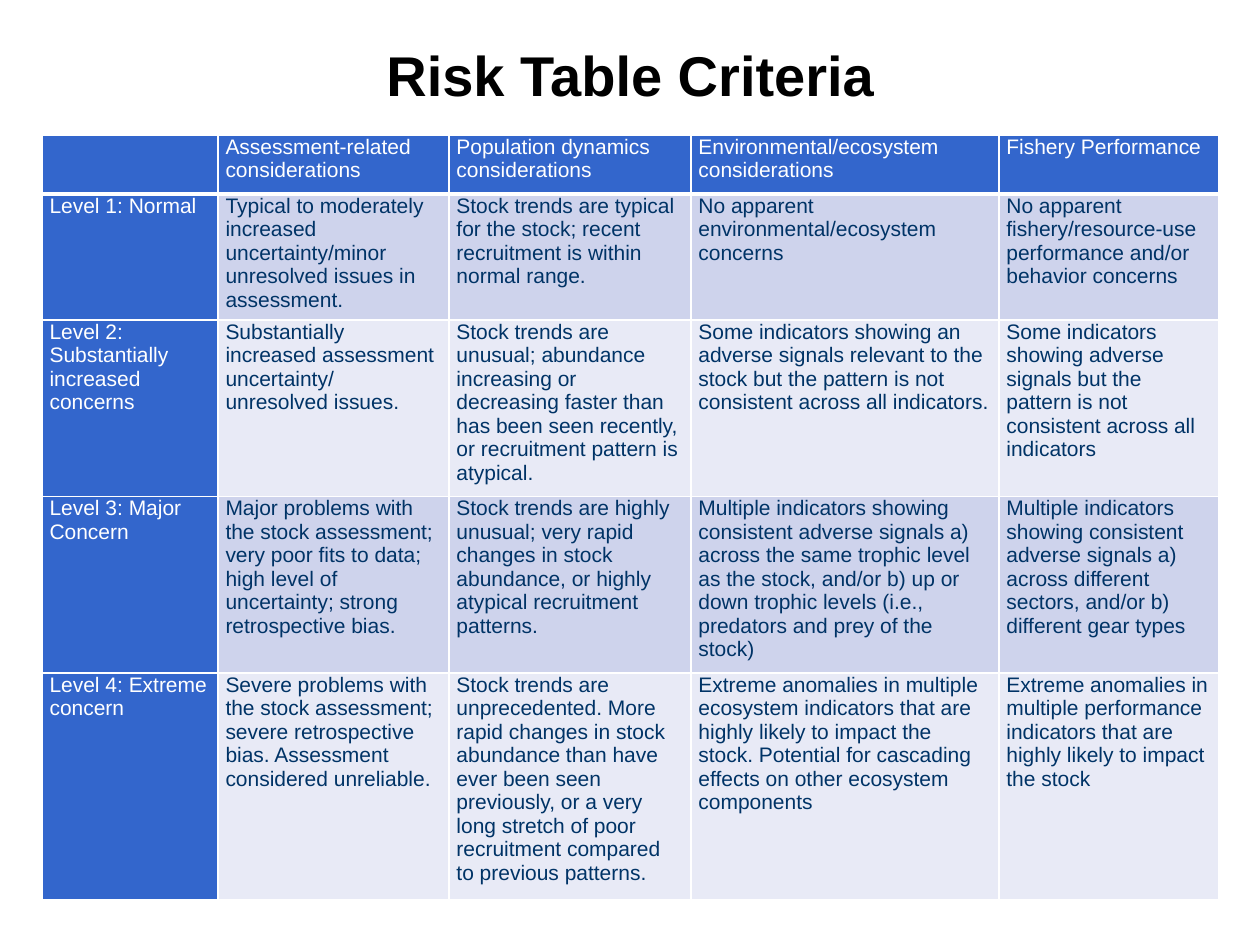
"""Build the risk table criteria slide."""
from lxml import etree
from pptx import Presentation
from pptx import util as u
from pptx.dml.color import RGBColor
from pptx.enum import text
from pptx.oxml import ns

PX = 914400 // 126
FONT = "Arial"
COLORS = {
    "title": "000000",
    "header": "3366CC",
    "header_text": "FFFFFF",
    "body_text": "003366",
    "odd_row": "CED3EC",
    "even_row": "E8EAF6",
    "border": "FFFFFF",
}
COLUMN_WIDTHS = [176, 231, 242, 308, 220]
ROW_HEIGHTS = [59, 126, 176, 176, 227]
CRITERIA = [
    ["",
     "Assessment-related considerations",
     "Population dynamics considerations",
     "Environmental/ecosystem considerations",
     "Fishery Performance"],
    ["Level 1: Normal",
     "Typical to moderately increased uncertainty/minor unresolved issues in assessment.",
     "Stock trends are typical for the stock; recent recruitment is within normal range.",
     "No apparent environmental/ecosystem concerns",
     "No apparent fishery/resource-use performance and/or behavior concerns"],
    ["Level 2: Substantially increased concerns",
     "Substantially increased assessment uncertainty/ unresolved issues.",
     "Stock trends are unusual; abundance increasing or decreasing faster than has been "
     "seen recently, or recruitment pattern is atypical.",
     "Some indicators showing an adverse signals relevant to the stock but the pattern is "
     "not consistent across all indicators.",
     "Some indicators showing adverse signals but the pattern is not consistent across all "
     "indicators"],
    ["Level 3: Major Concern",
     "Major problems with the stock assessment; very poor fits to data; high level of "
     "uncertainty; strong retrospective bias.",
     "Stock trends are highly unusual; very rapid changes in stock abundance, or highly "
     "atypical recruitment patterns.",
     "Multiple indicators showing consistent adverse signals a) across the same trophic "
     "level as the stock, and/or b) up or down trophic levels (i.e., predators and prey of "
     "the stock)",
     "Multiple indicators showing consistent adverse signals a) across different sectors, "
     "and/or b) different gear types"],
    ["Level 4: Extreme concern",
     "Severe problems with the stock assessment; severe retrospective bias. Assessment "
     "considered unreliable.",
     "Stock trends are unprecedented. More rapid changes in stock abundance than have ever "
     "been seen previously, or a very long stretch of poor recruitment compared to previous "
     "patterns.",
     "Extreme anomalies in multiple ecosystem indicators that are highly likely to impact "
     "the stock. Potential for cascading effects on other ecosystem components",
     "Extreme anomalies in multiple performance indicators that are highly likely to impact "
     "the stock"],
]


def px(*lengths):
    """Turn pixel lengths into EMU."""
    return [u.Emu(length * PX) for length in lengths]


def write(frame, words, *, size, color, bold=False, align=text.PP_ALIGN.LEFT):
    """Write one formatted paragraph into a text frame."""
    frame.word_wrap = True
    para = frame.paragraphs[0]
    para.alignment = align
    span = para.add_run()
    span.text = words
    span.font.name = FONT
    span.font.size = u.Pt(size)
    span.font.bold = bold
    span.font.color.rgb = RGBColor.from_string(COLORS[color])


def add_title(page, words):
    """Add the centred slide title."""
    box = page.shapes.add_textbox(*px(263, 13, 735, 122))
    box.text_frame.vertical_anchor = text.MSO_ANCHOR.MIDDLE
    write(box.text_frame, words, size=32, color="title", bold=True,
          align=text.PP_ALIGN.CENTER)


def add_borders(cell, bottom):
    """Draw the four cell borders, with a given bottom width in points."""
    properties = cell._tc.get_or_add_tcPr()
    for side, width in (("L", 1), ("R", 1), ("T", 1), ("B", bottom)):
        line = etree.SubElement(properties, ns.qn(f"a:ln{side}"), w=str(u.Pt(width)))
        fill = etree.SubElement(line, ns.qn("a:solidFill"))
        etree.SubElement(fill, ns.qn("a:srgbClr"), val=COLORS["border"])


def format_cell(cell, words, *, fill, color, bottom):
    """Set the borders, fill, margins and text of one table cell."""
    add_borders(cell, bottom)
    cell.fill.solid()
    cell.fill.fore_color.rgb = RGBColor.from_string(COLORS[fill])
    cell.margin_left = cell.margin_right = u.Inches(0.06)
    cell.margin_top = cell.margin_bottom = 0
    cell.vertical_anchor = text.MSO_ANCHOR.TOP
    if words:
        write(cell.text_frame, words, size=12, color=color)


def add_criteria_table(page):
    """Add the table with a header row, a header column and banded rows."""
    frame = page.shapes.add_table(
        len(ROW_HEIGHTS), len(COLUMN_WIDTHS),
        *px(42, 135, sum(COLUMN_WIDTHS), sum(ROW_HEIGHTS)))
    table = frame.table
    table.first_row = table.horz_banding = False
    for column, width in zip(table.columns, px(*COLUMN_WIDTHS)):
        column.width = width
    for row, height in zip(table.rows, px(*ROW_HEIGHTS)):
        row.height = height
    for r, entries in enumerate(CRITERIA):
        band = "odd_row" if r % 2 else "even_row"
        for c, words in enumerate(entries):
            heading = r == 0 or c == 0
            format_cell(table.cell(r, c), words,
                        fill="header" if heading else band,
                        color="header_text" if heading else "body_text",
                        bottom=1 if r else 3)


def main():
    """Build and save the deck."""
    deck = Presentation()
    deck.slide_width, deck.slide_height = px(1260, 945)
    page = deck.slides.add_slide(deck.slide_layouts[6])
    add_title(page, "Risk Table Criteria")
    add_criteria_table(page)
    deck.save("out.pptx")


if __name__ == "__main__":
    main()
